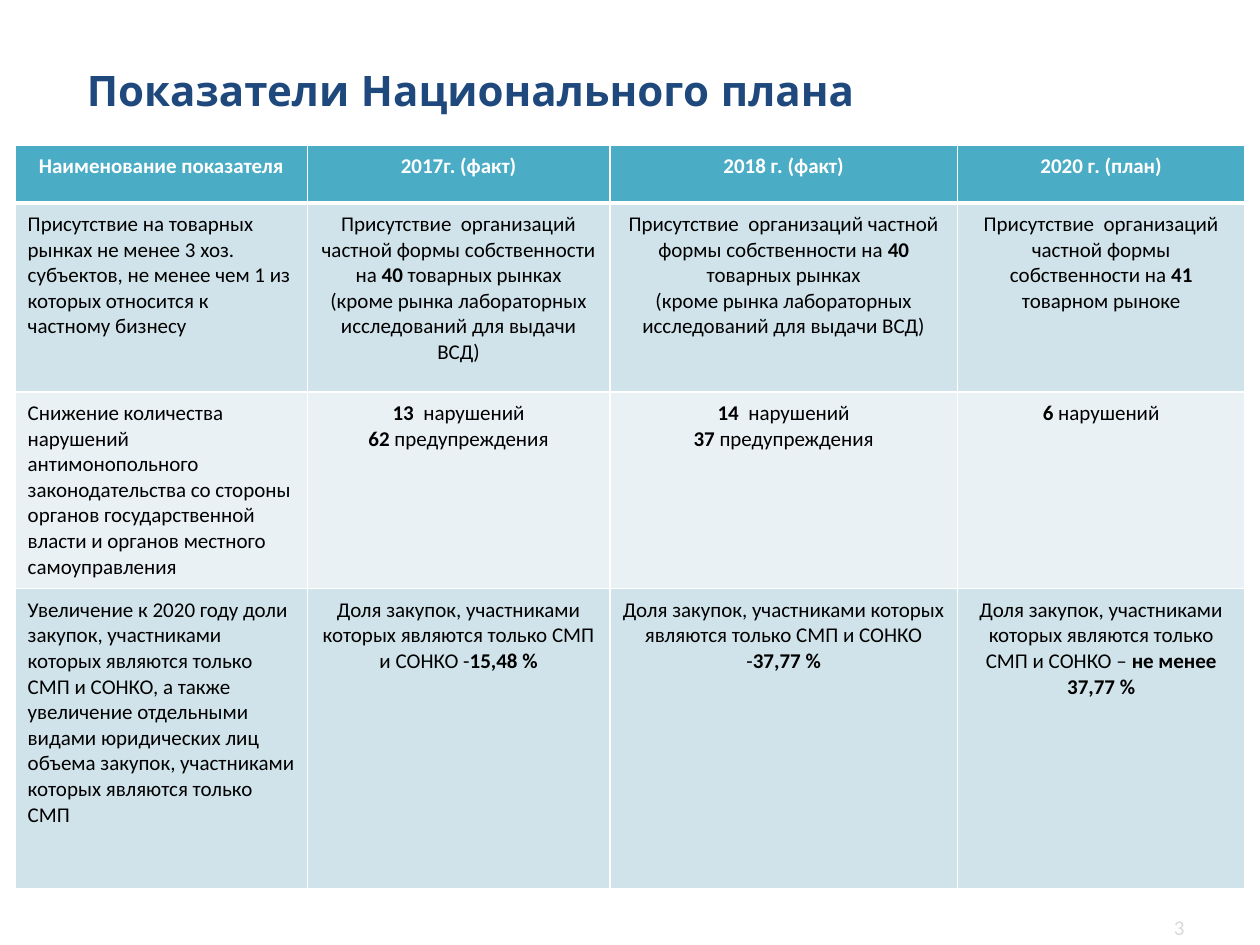
import lxml.etree
import pptx
import pptx.dml.color
import pptx.enum.text
import pptx.oxml.ns
import pptx.util

Inches = pptx.util.Inches
ALIGN = pptx.enum.text.PP_ALIGN
ANCHOR = pptx.enum.text.MSO_ANCHOR

COLUMN_WIDTHS = [2.32, 2.4, 2.76, 2.28]
ROW_HEIGHTS = [0.46, 1.5, 1.56, 2.38]
HEADER_FILL = "4BACC6"
BAND_FILLS = ["E9F1F5", "D0E3EA"]
CELL_MARGINS = {"margin_left": 0.1, "margin_right": 0.1,
                "margin_top": 0.07, "margin_bottom": 0.07}

PRESENCE = "Присутствие  организаций частной формы собственности на "
MARKETS = PRESENCE + "**40** товарных рынках\n(кроме рынка лабораторных исследований для выдачи ВСД)"
SHARE = "Доля закупок, участниками которых являются только СМП и СОНКО "

# Text between double asterisks is bold; a line break starts a paragraph
ROWS = [
    ["**Наименование показателя**", "**2017г. (факт)**",
     "**2018 г. (факт)**", "**2020 г. (план)**"],
    ["Присутствие на товарных рынках не менее 3 хоз. субъектов, "
     "не менее чем 1 из которых относится к частному бизнесу",
     MARKETS, MARKETS, PRESENCE + "**41 **товарном рыноке"],
    ["Снижение количества нарушений антимонопольного законодательства со стороны "
     "органов государственной власти и органов местного самоуправления",
     "**13**  нарушений\n**62** предупреждения",
     "**14 ** нарушений\n**37** предупреждения",
     "**6** нарушений"],
    ["Увеличение к 2020 году доли закупок, участниками которых являются только "
     "СМП и СОНКО, а также увеличение отдельными видами юридических лиц объема "
     "закупок, участниками которых являются только СМП",
     SHARE + "-**15,48 %**", SHARE + "-**37,77 %**",
     SHARE + "– **не менее 37,77 %**"],
]


def color(value):
    return pptx.dml.color.RGBColor.from_string(value)


def write_text(frame, text, font_color, align, **font_values):
    """Fill a text frame, turning **marked** parts into bold spans."""
    values = {"name": "Calibri", "size": pptx.util.Pt(12), **font_values}
    for index, line in enumerate(text.split("\n")):
        para = frame.add_paragraph() if index else frame.paragraphs[0]
        para.alignment = align
        for number, part in enumerate(line.split("**")):
            if not part:
                continue
            span = para.add_run()
            span.text = part
            span.font.bold = number % 2 == 1
            span.font.color.rgb = color(font_color)
            for name, value in values.items():
                setattr(span.font, name, value)


def add_borders(cell, widths):
    """Draw white cell borders; widths maps each side to points."""
    properties = cell._tc.get_or_add_tcPr()
    for side, width in widths.items():
        line = lxml.etree.SubElement(properties, pptx.oxml.ns.qn(f"a:ln{side}"),
                                     w=str(pptx.util.Pt(width)))
        fill = lxml.etree.SubElement(line, pptx.oxml.ns.qn("a:solidFill"))
        lxml.etree.SubElement(fill, pptx.oxml.ns.qn("a:srgbClr"), val="FFFFFF")


def add_title(page, text):
    title = page.shapes.title
    place = {"left": 0.59, "top": 0.4, "width": 9, "height": 0.62}
    for name, value in place.items():
        setattr(title, name, Inches(value))
    title.text_frame.vertical_anchor = ANCHOR.MIDDLE
    write_text(title.text_frame, text, "1F497D", ALIGN.LEFT,
               name="Quicksand", size=pptx.util.Pt(24), bold=True)


def add_indicator_table(page):
    table = page.shapes.add_table(
        len(ROWS), len(COLUMN_WIDTHS), Inches(0.12), Inches(1.15),
        Inches(sum(COLUMN_WIDTHS)), Inches(sum(ROW_HEIGHTS))).table
    for column, width in zip(table.columns, COLUMN_WIDTHS):
        column.width = Inches(width)
    for row, height in zip(table.rows, ROW_HEIGHTS):
        row.height = Inches(height)

    for row_index, texts in enumerate(ROWS):
        header = row_index == 0
        for column_index, text in enumerate(texts):
            cell = table.cell(row_index, column_index)
            for name, value in CELL_MARGINS.items():
                setattr(cell, name, Inches(value))
            # The header is parted from the body by a thicker line
            add_borders(cell, {"L": 1, "R": 1, "T": 3 if row_index == 1 else 1,
                               "B": 3 if header else 1})
            cell.fill.solid()
            cell.fill.fore_color.rgb = color(
                HEADER_FILL if header else BAND_FILLS[row_index % 2])
            centered = header or column_index > 0
            write_text(cell.text_frame, text, "FFFFFF" if header else "000000",
                       ALIGN.CENTER if centered else ALIGN.LEFT)


def add_page_number(page, number):
    box = page.shapes.add_textbox(Inches(7.17), Inches(7.16), Inches(2.33), Inches(0.4))
    box.text_frame.word_wrap = True
    box.text_frame.vertical_anchor = ANCHOR.MIDDLE
    write_text(box.text_frame, number, "D9D9D9", ALIGN.RIGHT)


def main():
    deck = pptx.Presentation()
    deck.slide_width, deck.slide_height = Inches(10), Inches(7.5)
    page = deck.slides.add_slide(deck.slide_layouts[5])  # title only
    add_title(page, "Показатели Национального плана")
    add_indicator_table(page)
    add_page_number(page, "3")
    deck.save("out.pptx")


if __name__ == "__main__":
    main()
